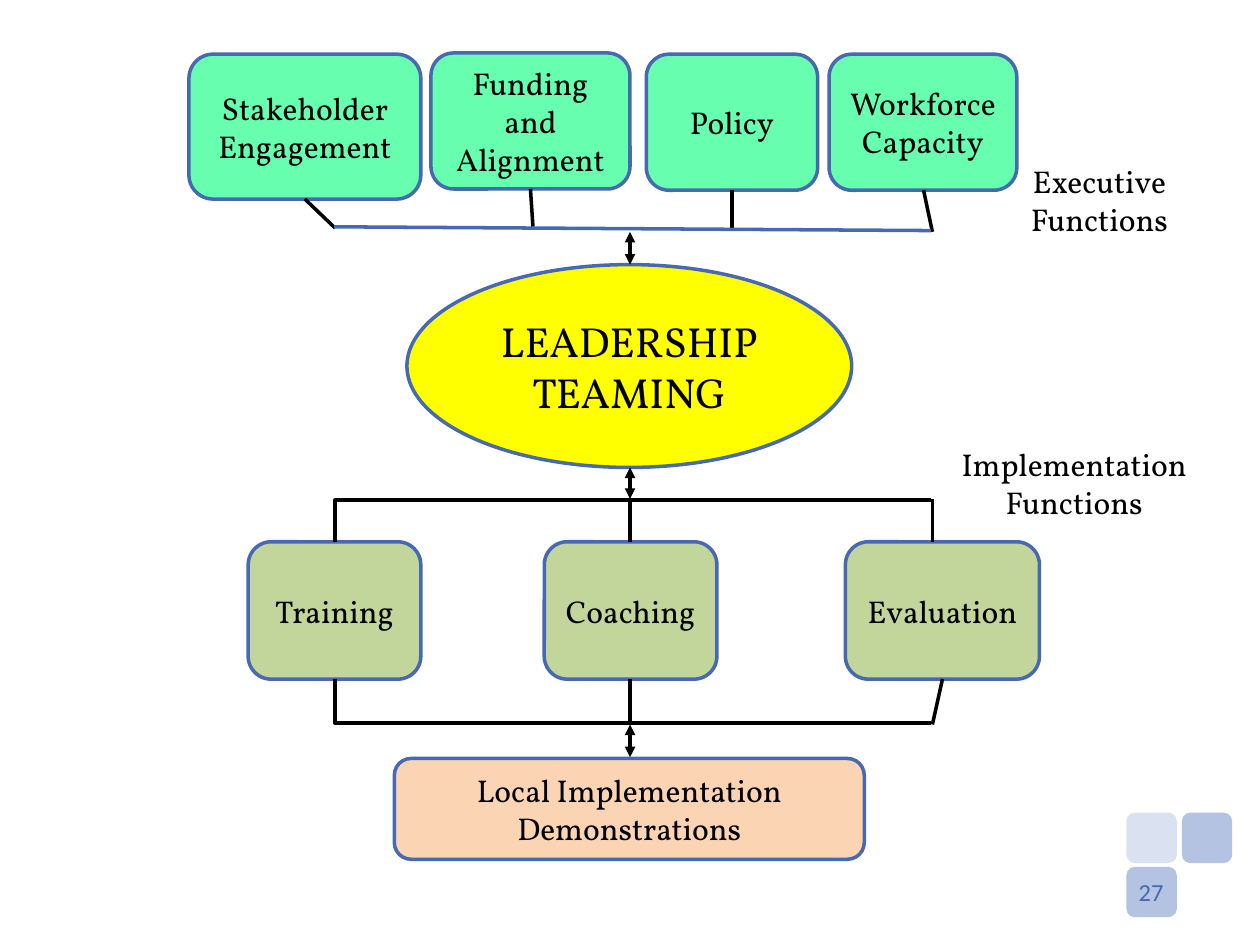
from lxml import etree
from pptx import Presentation, util as u
from pptx.dml.color import RGBColor
from pptx.enum import shapes, text
from pptx.oxml.ns import qn

Inches = u.Inches
COLORS = {
    "green": "68FEAF", "yellow": "FFFF00", "olive": "C2D59B", "peach": "FBD4B4",
    "outline": "4769B2", "black": "000000", "tile": "B4C3E1", "tile_light": "DAE1F0",
}
ROUNDED = shapes.MSO_SHAPE.ROUNDED_RECTANGLE
OVAL = shapes.MSO_SHAPE.OVAL
FRAME = {
    "word_wrap": True, "vertical_anchor": text.MSO_ANCHOR.MIDDLE,
    "margin_left": Inches(0.1), "margin_right": Inches(0.1),
    "margin_top": Inches(0.05), "margin_bottom": Inches(0.05),
}


def color(name):
    return RGBColor.from_string(COLORS[name])


def apply(target, values):
    for name, value in values.items():
        setattr(target, name, value)


def write(shape, words, size=18, font="Vollkorn", ink="black"):
    apply(shape.text_frame, FRAME)
    paragraph = shape.text_frame.paragraphs[0]
    paragraph.text = words
    paragraph.alignment = text.PP_ALIGN.CENTER
    apply(paragraph.font, {"name": font, "size": u.Pt(size)})
    paragraph.font.color.rgb = color(ink)


def add_node(slide, kind, box, fill=None, outline=None, words="", size=18):
    shape = slide.shapes.add_shape(kind, *map(Inches, box))
    shape.shadow.inherit = False
    if fill:
        shape.fill.solid()
        shape.fill.fore_color.rgb = color(fill)
    else:
        shape.fill.background()
    if outline:
        shape.line.color.rgb = color(outline)
        shape.line.width = u.Pt(2)
    else:
        shape.line.fill.background()
    if words:
        write(shape, words, size)
    return shape


def add_line(slide, ends, ink="black", arrows=False, kind=shapes.MSO_CONNECTOR.STRAIGHT):
    connector = slide.shapes.add_connector(kind, *map(Inches, ends))
    connector.line.color.rgb = color(ink)
    connector.line.width = u.Pt(2)
    if arrows:
        line = connector.line._get_or_add_ln()
        for end in ("a:headEnd", "a:tailEnd"):
            etree.SubElement(line, qn(end)).set("type", "triangle")
    etree.SubElement(connector._element.spPr, qn("a:effectLst"))
    return connector


def add_elbow(slide, x1, y1, x2, y2):
    """One-corner connector: vertical from (x1, y1), then horizontal to (x2, y2)."""
    # The unrotated frame shares its centre with the elbow; a quarter turn swaps its sides
    center_x, center_y = (x1 + x2) / 2, (y1 + y2) / 2
    half_width, half_height = (y1 - y2) / 2, (x2 - x1) / 2
    ends = (center_x - half_width, center_y - half_height,
            center_x + half_width, center_y + half_height)
    connector = add_line(slide, ends, kind=shapes.MSO_CONNECTOR.ELBOW)
    properties = connector._element.spPr
    properties.find(qn("a:xfrm")).set("rot", str(270 * 60000))
    properties.find(qn("a:prstGeom")).set("prst", "bentConnector2")


def add_page_number(slide):
    tiles = [(9.38, 6.45, "tile"), (8.94, 6.88, "tile"), (8.94, 6.45, "tile_light")]
    for left, top, fill in tiles:
        add_node(slide, ROUNDED, (left, top, 0.4, 0.4), fill)
    number = slide.shapes.add_textbox(*map(Inches, (8.84, 6.88, 0.59, 0.4)))
    write(number, "27", 14, "Calibri", "outline")


def add_nodes(slide):
    # Executive functions
    for words, box in [
        ("Stakeholder Engagement", (1.5, 0.43, 1.84, 1.15)),
        ("Funding and Alignment", (3.42, 0.42, 1.58, 1.08)),
        ("Policy", (5.13, 0.43, 1.36, 1.08)),
        ("Workforce Capacity", (6.58, 0.43, 1.49, 1.08)),
    ]:
        add_node(slide, ROUNDED, box, "green", "outline", words)
    # Leadership
    add_node(slide, OVAL, (3.23, 2.1, 3.53, 1.61), "yellow", "outline",
             "LEADERSHIP TEAMING", 24)
    # Implementation functions
    for words, left, width in [
        ("Training", 1.97, 1.37), ("Coaching", 4.32, 1.37), ("Evaluation", 6.71, 1.54),
    ]:
        add_node(slide, ROUNDED, (left, 4.3, width, 1.09), "olive", "outline", words)
    # Demonstrations
    add_node(slide, ROUNDED, (3.13, 6.02, 3.73, 0.8), "peach", "outline",
             "Local Implementation Demonstrations")
    # Side labels
    for words, left, top in [
        ("Executive Functions", 7.17, 1.25), ("Implementation Functions", 6.97, 3.5),
    ]:
        add_node(slide, OVAL, (left, top, 3.11, 0.67), words=words)


def add_links(slide):
    # Executive boxes to their shared line
    for ends in [
        (2.42, 1.58, 2.66, 1.81), (4.21, 1.5, 4.23, 1.8),
        (5.81, 1.51, 5.81, 1.83), (7.33, 1.51, 7.4, 1.84),
    ]:
        add_line(slide, ends)
    add_line(slide, (7.39, 1.83, 2.65, 1.8), "outline")
    # Brackets above and below the implementation boxes
    add_elbow(slide, 2.66, 4.3, 7.39, 3.97)
    add_elbow(slide, 2.66, 5.39, 7.39, 5.74)
    for ends in [
        (5, 4.3, 5, 3.96), (7.4, 4.3, 7.4, 3.96),
        (5, 5.72, 5, 5.39), (7.4, 5.75, 7.48, 5.39),
    ]:
        add_line(slide, ends)
    # Two-way arrows along the centre
    for top, bottom in [(1.84, 2.1), (3.71, 3.96), (5.75, 6.01)]:
        add_line(slide, (5, top, 5, bottom), arrows=True)


def main():
    presentation = Presentation()
    apply(presentation, {"slide_width": Inches(10), "slide_height": Inches(7.5)})
    slide = presentation.slides.add_slide(presentation.slide_layouts[6])
    add_page_number(slide)
    add_nodes(slide)
    add_links(slide)
    presentation.save("out.pptx")


if __name__ == "__main__":
    main()
